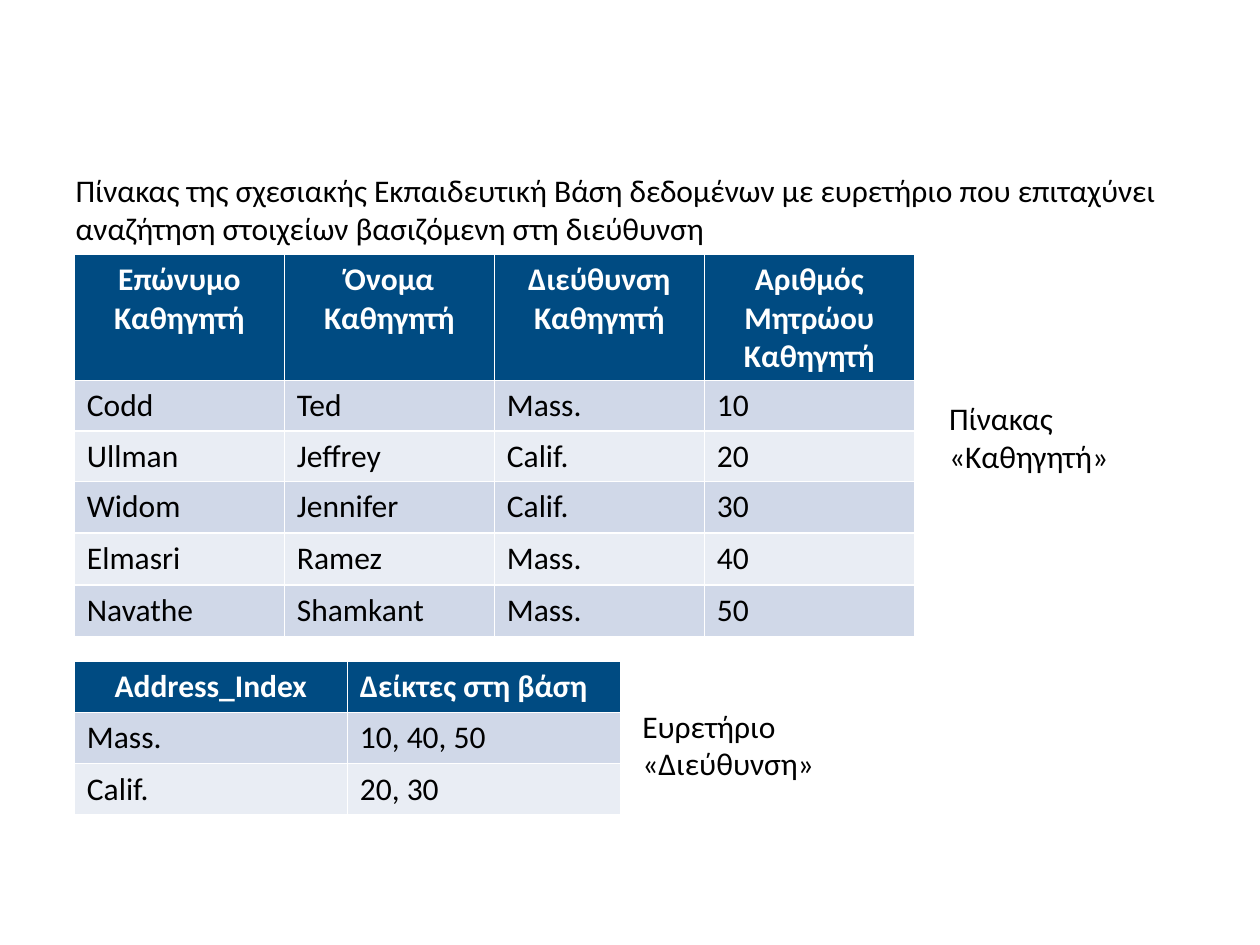
from lxml.etree import SubElement
from pptx import Presentation
from pptx.dml.color import RGBColor
from pptx.enum.text import MSO_ANCHOR, MSO_AUTO_SIZE, PP_ALIGN
from pptx.oxml.ns import qn
from pptx.util import Inches, Pt

COLORS = {
    "text": "000000",
    "header": "004B82",
    "header_text": "FFFFFF",
    "bands": ("D0D8E8", "E9EDF4"),
}
GRID_COLUMNS, GRID_ROWS = 120, 90
TABLE_LEFT = 7.08

PROFESSORS = [
    ["Επώνυμο Καθηγητή", "Όνομα Καθηγητή", "Διεύθυνση Καθηγητή", "Αριθμός Μητρώου Καθηγητή"],
    ["Codd", "Ted", "Mass.", "10"],
    ["Ullman", "Jeffrey", "Calif.", "20"],
    ["Widom", "Jennifer", "Calif.", "30"],
    ["Elmasri", "Ramez", "Mass.", "40"],
    ["Navathe", "Shamkant", "Mass.", "50"],
]
ADDRESS_INDEX = [
    ["Address_Index", "Δείκτες στη βάση"],
    ["Mass.", "10, 40, 50"],
    ["Calif.", "20, 30"],
]


class SlideBuilder:
    """Places elements on a grid of 120 columns and 90 rows."""

    font_name = "Calibri"
    font_size = Pt(18)

    def __init__(self, presentation):
        self.column = presentation.slide_width / GRID_COLUMNS
        self.row = presentation.slide_height / GRID_ROWS
        self.slide = presentation.slides.add_slide(presentation.slide_layouts[1])
        title = self.slide.shapes.title.element
        title.getparent().remove(title)

    def box(self, left, top, width, height):
        return (round(left * self.column), round(top * self.row),
                round(width * self.column), round(height * self.row))

    def style_text(self, text_frame, text, color, bold=False, align=PP_ALIGN.LEFT):
        text_frame.text = text
        paragraph = text_frame.paragraphs[0]
        paragraph.alignment = align
        font = paragraph.runs[0].font
        font.name, font.size, font.bold = self.font_name, self.font_size, bold
        font.color.rgb = RGBColor.from_string(color)
        return paragraph

    def body(self, text, *area):
        shape = self.slide.placeholders[1]
        shape.left, shape.top, shape.width, shape.height = self.box(*area)
        shape.text_frame.vertical_anchor = MSO_ANCHOR.TOP
        shape.text_frame.auto_size = MSO_AUTO_SIZE.NONE
        paragraph = self.style_text(shape.text_frame, text, COLORS["text"])
        properties = paragraph._p.get_or_add_pPr()
        properties.set("marL", "0")
        properties.set("indent", "0")
        SubElement(properties, qn("a:buNone"))

    def label(self, text, *area):
        text_frame = self.slide.shapes.add_textbox(*self.box(*area)).text_frame
        text_frame.word_wrap = True
        text_frame.auto_size = MSO_AUTO_SIZE.SHAPE_TO_FIT_TEXT
        self.style_text(text_frame, text, COLORS["text"])

    def table(self, records, top, width, row_heights, left_headers=()):
        """Adds a banded table; headers are centred unless in left_headers."""
        area = self.box(TABLE_LEFT, top, width, sum(row_heights))
        table = self.slide.shapes.add_table(len(records), len(records[0]), *area).table
        for row_index, (record, height) in enumerate(zip(records, row_heights)):
            table.rows[row_index].height = round(height * self.row)
            is_header = row_index == 0
            fill = COLORS["header"] if is_header else COLORS["bands"][(row_index - 1) % 2]
            color = COLORS["header_text"] if is_header else COLORS["text"]
            for column_index, text in enumerate(record):
                cell = table.cell(row_index, column_index)
                cell.fill.solid()
                cell.fill.fore_color.rgb = RGBColor.from_string(fill)
                centred = is_header and text not in left_headers
                align = PP_ALIGN.CENTER if centred else PP_ALIGN.LEFT
                self.style_text(cell.text_frame, text, color, is_header, align)


def main():
    presentation = Presentation()
    presentation.slide_width, presentation.slide_height = Inches(10), Inches(7.5)
    builder = SlideBuilder(presentation)
    builder.body(
        "Πίνακας της σχεσιακής Εκπαιδευτική Βάση δεδομένων με ευρετήριο που "
        "επιταχύνει αναζήτηση στοιχείων βασιζόμενη στη διεύθυνση",
        6, 15.7, 108, 9.8)
    builder.label("Πίνακας «Καθηγητή»", 89.2, 37.4, 27.5, 8.5)
    builder.label("Ευρετήριο «Διεύθυνση»", 60, 66.7, 29.3, 8.5)
    builder.table(PROFESSORS, 24.24, 80, [11.9, 4.8, 4.8] + [4.93] * 3)
    builder.table(ADDRESS_INDEX, 63, 52, [4.87] * 3, left_headers=("Δείκτες στη βάση",))
    presentation.save("out.pptx")


if __name__ == "__main__":
    main()
